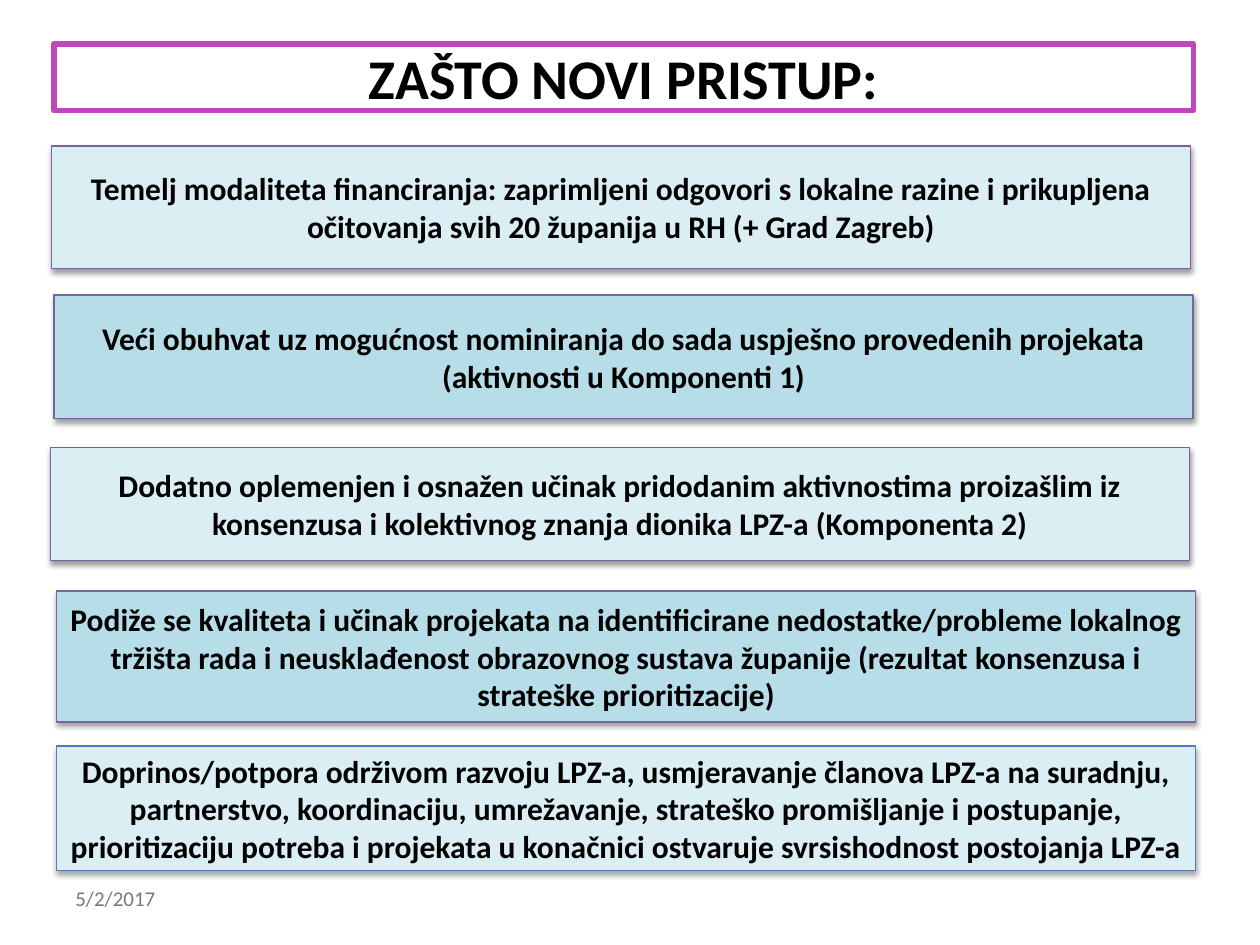
from dataclasses import dataclass

from lxml import etree
from pptx import Presentation
from pptx import util as u
from pptx.dml.color import RGBColor
from pptx.enum import shapes, text
from pptx.oxml import ns

FONT = "Calibri"
BLACK = "000000"
WHITE = "FFFFFF"
PALE = "DBEEF4"
TEAL = "B7DEE8"
PURPLE = "7D60A0"
BLUE = "4B7EBC"
MAGENTA = "BF47B9"
BOX_WIDTH = 9.04


@dataclass
class Shadow:
    opacity: int = 38
    blur: float = 3.1
    distance: float = 1.6


@dataclass
class Box:
    left: float
    top: float
    height: float
    wording: str
    fill: str
    line: str = PURPLE
    line_width: float = 0.75
    size: int = 18
    shadow: Shadow | None = None


TITLE = Box(0.43, 0.35, 0.53, "ZAŠTO NOVI PRISTUP:", WHITE, MAGENTA, 3, 32)
REASONS = [
    Box(0.41, 1.16, 0.97,
        "Temelj modaliteta financiranja: zaprimljeni odgovori s lokalne razine "
        "i prikupljena očitovanja svih 20 županija u RH (+ Grad Zagreb)",
        PALE, shadow=Shadow()),
    Box(0.43, 2.34, 0.98,
        "Veći obuhvat uz mogućnost nominiranja do sada uspješno provedenih "
        "projekata (aktivnosti u Komponenti 1)",
        TEAL, shadow=Shadow()),
    Box(0.4, 3.55, 0.9,
        "Dodatno oplemenjen i osnažen učinak pridodanim aktivnostima proizašlim "
        "iz konsenzusa i kolektivnog znanja dionika LPZ-a (Komponenta 2)",
        PALE, shadow=Shadow()),
    Box(0.45, 4.69, 1.04,
        "Podiže se kvaliteta i učinak projekata na identificirane "
        "nedostatke/probleme lokalnog tržišta rada i neusklađenost obrazovnog "
        "sustava županije (rezultat konsenzusa i strateške prioritizacije)",
        TEAL, shadow=Shadow()),
    Box(0.45, 5.92, 0.99,
        "Doprinos/potpora održivom razvoju LPZ-a, usmjeravanje članova LPZ-a na "
        "suradnju, partnerstvo, koordinaciju, umrežavanje, strateško promišljanje "
        "i postupanje, prioritizaciju potreba i projekata u konačnici ostvaruje "
        "svrsishodnost postojanja LPZ-a",
        PALE, line=BLUE, shadow=Shadow(35, 3.1, 1.8)),
]


def color(value: str) -> RGBColor:
    return RGBColor.from_string(value)


def write(frame, wording: str, size: int, ink: str, bold: bool = False):
    """Fill a text frame with one formatted paragraph and return it."""
    frame.word_wrap = True
    frame.text = wording
    paragraph = frame.paragraphs[0]
    font = paragraph.runs[0].font
    font.name, font.size, font.bold = FONT, u.Pt(size), bold
    font.color.rgb = color(ink)
    return paragraph


def add_shadow(shape, shadow: Shadow) -> None:
    """Put a downward outer shadow in the shape's empty effect list."""
    effects = shape._element.spPr.find(ns.qn("a:effectLst"))
    outer = etree.SubElement(
        effects, ns.qn("a:outerShdw"), blurRad=str(u.Pt(shadow.blur)),
        dist=str(u.Pt(shadow.distance)), dir=str(90 * 60000), rotWithShape="0")
    ink = etree.SubElement(outer, ns.qn("a:srgbClr"), val=BLACK)
    etree.SubElement(ink, ns.qn("a:alpha"), val=str(shadow.opacity * 1000))


def add_box(slide, box: Box) -> None:
    shape = slide.shapes.add_shape(
        shapes.MSO_SHAPE.RECTANGLE, u.Inches(box.left), u.Inches(box.top),
        u.Inches(BOX_WIDTH), u.Inches(box.height))
    shape.fill.solid()
    shape.fill.fore_color.rgb = color(box.fill)
    shape.line.color.rgb = color(box.line)
    shape.line.width = u.Pt(box.line_width)
    shape.shadow.inherit = False
    if box.shadow:
        add_shadow(shape, box.shadow)
    shape.text_frame.vertical_anchor = text.MSO_ANCHOR.MIDDLE
    paragraph = write(shape.text_frame, box.wording, box.size, BLACK, bold=True)
    paragraph.alignment = text.PP_ALIGN.CENTER


def add_date(slide, wording: str) -> None:
    date = slide.shapes.add_textbox(
        u.Inches(0.5), u.Inches(6.98), u.Inches(2.33), u.Inches(0.4))
    write(date.text_frame, wording, 12, "777877")


def main() -> None:
    presentation = Presentation()
    presentation.slide_width = u.Inches(10)
    presentation.slide_height = u.Inches(7.5)
    slide = presentation.slides.add_slide(presentation.slide_layouts[6])
    add_date(slide, "5/2/2017")
    for box in [TITLE, *REASONS]:
        add_box(slide, box)
    presentation.save("out.pptx")


if __name__ == "__main__":
    main()
